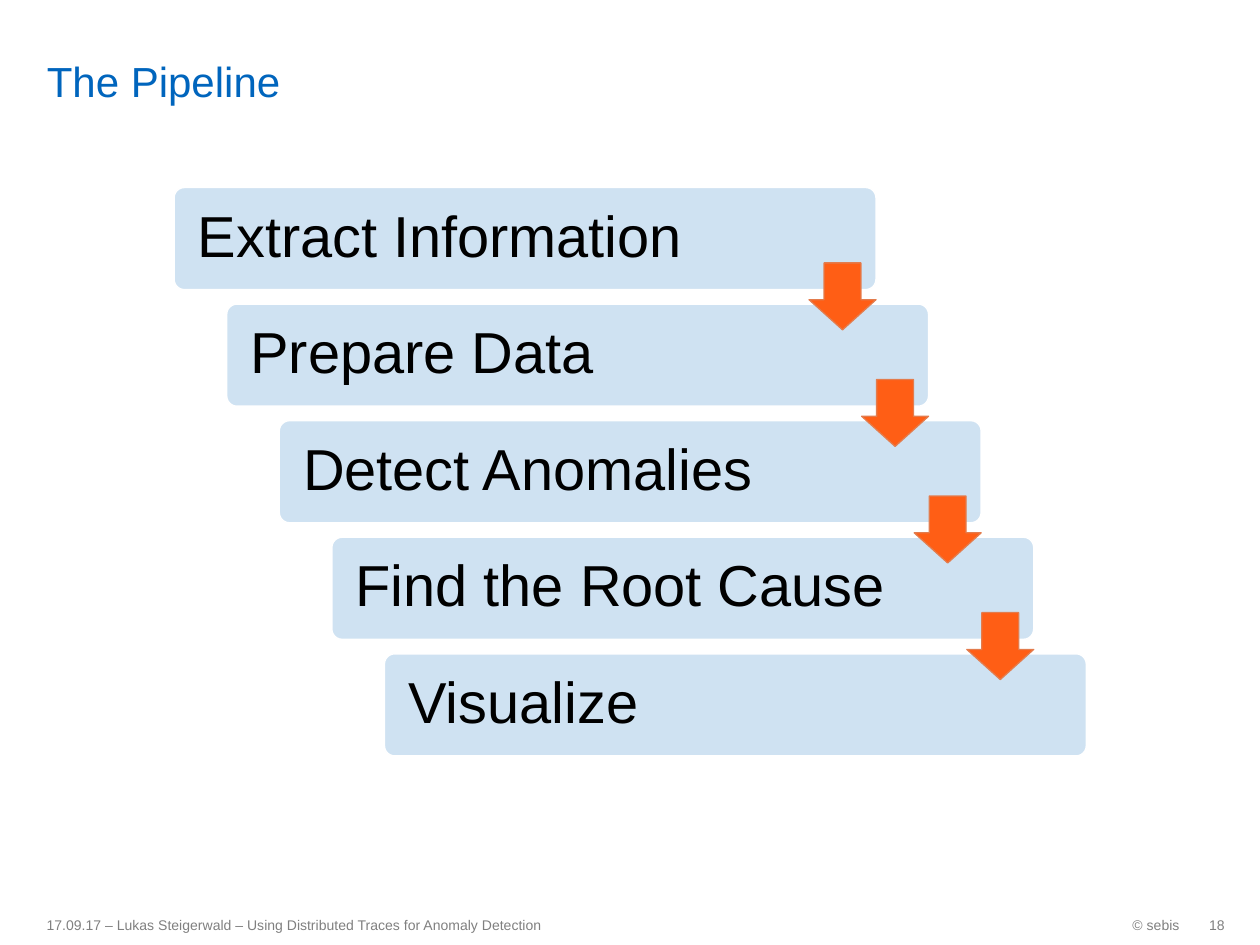
from lxml.etree import SubElement
from pptx import Presentation
from pptx.dml.color import RGBColor
from pptx.enum.shapes import MSO_SHAPE as SHAPE
from pptx.enum.text import MSO_ANCHOR as ANCHOR, PP_ALIGN as ALIGN
from pptx.oxml.ns import qn
from pptx.util import Cm, Pt


def rgb(value):
    return RGBColor.from_string(value)


def style(p, size, color, align=ALIGN.LEFT):
    p.alignment = align
    p.font.name = "Arial"
    p.font.size = Pt(size)
    p.font.color.rgb = rgb(color)


prs = Presentation()
prs.slide_width, prs.slide_height = Cm(25.4), Cm(19.05)
s = prs.slides.add_slide(prs.slide_layouts[5])

title = s.shapes.title
title.left, title.top, title.width, title.height = Cm(0.69), Cm(0.13), Cm(20.93), Cm(2)
tf = title.text_frame
tf.text = "The Pipeline"
tf.vertical_anchor = ANCHOR.BOTTOM
tf.margin_top = tf.margin_bottom = 0
style(tf.paragraphs[0], 24, "0065BD")

steps = ["Extract Information", "Prepare Data", "Detect Anomalies",
         "Find the Root Cause", "Visualize"]
step_x, step_y = 1.06, 2.35

for i, step in enumerate(steps):
    sp = s.shapes.add_shape(SHAPE.ROUNDED_RECTANGLE, Cm(3.51 + i * step_x),
                            Cm(3.78 + i * step_y), Cm(14.15), Cm(2.06))
    sp.shadow.inherit = False
    sp.adjustments[0] = 0.1
    sp.fill.solid()
    sp.fill.fore_color.rgb = rgb("0065BD")
    color = sp.fill._xPr.find(qn("a:solidFill"))[0]
    SubElement(color, qn("a:alpha"), val="19000")
    sp.line.color.rgb = rgb("FFFFFF")
    sp.line.width = Pt(0.85)
    tf = sp.text_frame
    tf.text = step
    tf.word_wrap = True
    tf.vertical_anchor = ANCHOR.MIDDLE
    tf.margin_left = tf.margin_right = Cm(0.42)
    p = tf.paragraphs[0]
    p.line_spacing = 0.9
    style(p, 33, "000000")

for i in range(len(steps) - 1):
    sp = s.shapes.add_shape(SHAPE.DOWN_ARROW, Cm(16.31 + i * step_x),
                            Cm(5.3 + i * step_y), Cm(1.35), Cm(1.35))
    sp.shadow.inherit = False
    sp.adjustments[0], sp.adjustments[1] = 0.55, 0.45
    sp.fill.solid()
    sp.fill.fore_color.rgb = rgb("FF5E15")
    sp.line.color.rgb = rgb("E37C4D")
    sp.line.width = Pt(0.75)

footers = [
    ("17.09.17 – Lukas Steigerwald – Using Distributed Traces for Anomaly Detection",
     0.69, 12.01, 0.25, ALIGN.LEFT),
    ("© sebis", 19.56, 4.47, 0.25, ALIGN.RIGHT),
    ("18", 24, 0.69, 0, ALIGN.RIGHT),
]
for text, left, width, margin_right, align in footers:
    sp = s.shapes.add_textbox(Cm(left), Cm(18.25), Cm(width), Cm(0.8))
    tf = sp.text_frame
    tf.text = text
    tf.word_wrap = align == ALIGN.LEFT
    tf.vertical_anchor = ANCHOR.MIDDLE
    tf.margin_right = Cm(margin_right)
    style(tf.paragraphs[0], 8, "808080", align)

prs.save("out.pptx")
